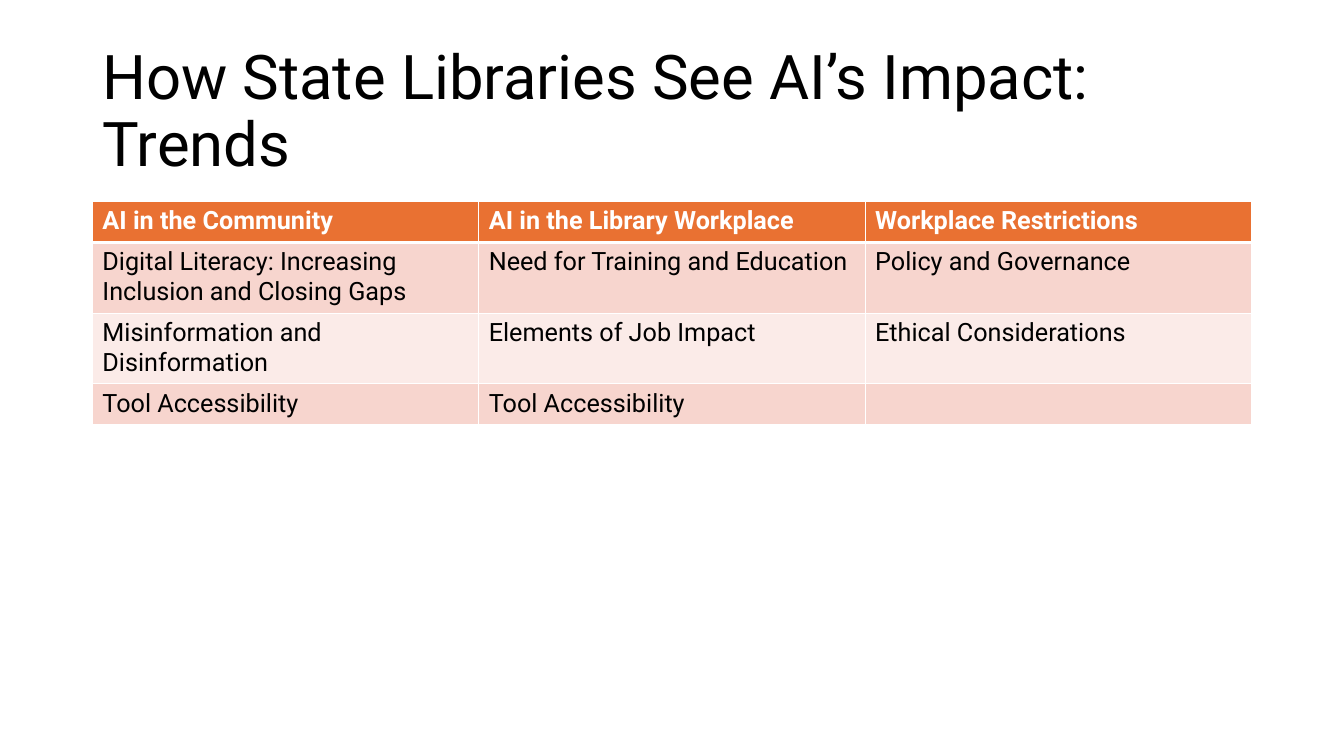
from lxml.etree import SubElement as Sub
from pptx import Presentation
from pptx.dml.color import RGBColor as RGB
from pptx.enum.text import MSO_ANCHOR as Anchor
from pptx.oxml.ns import qn
from pptx.util import Pt

PX = 9525  # EMU per px, 96 px to the inch
FONT, WHITE, BLACK = "Roboto", "FFFFFF", "000000"
HEAD, DARK, LIGHT = "E97132", "F7D5CE", "FBEBE8"
LEFT, WIDE, COL, ROW = 88, 1104, 368, 39

ROWS = [
    ["AI in the Community", "AI in the Library Workplace", "Workplace Restrictions"],
    ["Digital Literacy: Increasing Inclusion and Closing Gaps",
     "Need for Training and Education", "Policy and Governance"],
    ["Misinformation and Disinformation", "Elements of Job Impact",
     "Ethical Considerations"],
    ["Tool Accessibility", "Tool Accessibility", ""],
]


def write(frame, text, size, color, bold=False):
    para = frame.paragraphs[0]
    para.text = text
    look = {"name": FONT, "size": Pt(size), "bold": bold}
    for key, value in look.items():
        setattr(para.font, key, value)
    para.font.color.rgb = RGB.from_string(color)
    return para


def edge(cell, side, width):
    """Draw a white border of width points on one side (L, R, T or B)."""
    line = Sub(cell._tc.get_or_add_tcPr(), qn(f"a:ln{side}"), w=str(Pt(width)))
    fill = Sub(line, qn("a:solidFill"))
    Sub(fill, qn("a:srgbClr"), val=WHITE)


deck = Presentation()
deck.slide_width, deck.slide_height = 1280 * PX, 720 * PX
slide = deck.slides.add_slide(deck.slide_layouts[6])

# Title
box = slide.shapes.add_textbox(LEFT * PX, 38 * PX, WIDE * PX, 139 * PX)
frame = box.text_frame
frame.word_wrap = True
frame.vertical_anchor = Anchor.MIDDLE
write(frame, "How State Libraries See AI’s Impact: Trends", 44, BLACK).line_spacing = 0.9

# Table of trends
table = slide.shapes.add_table(len(ROWS), 3, LEFT * PX, 192 * PX,
                               WIDE * PX, len(ROWS) * ROW * PX).table
for col in table.columns:
    col.width = COL * PX
for r, texts in enumerate(ROWS):
    table.rows[r].height = ROW * PX
    shade = HEAD if r == 0 else DARK if r % 2 else LIGHT
    for c, text in enumerate(texts):
        cell = table.cell(r, c)
        edge(cell, "L", 1)
        edge(cell, "R", 1)
        edge(cell, "T", 3 if r == 1 else 1)
        edge(cell, "B", 3 if r == 0 else 1)
        cell.fill.solid()
        cell.fill.fore_color.rgb = RGB.from_string(shade)
        write(cell.text_frame, text, 18, BLACK if r else WHITE, r == 0)

deck.save("out.pptx")
